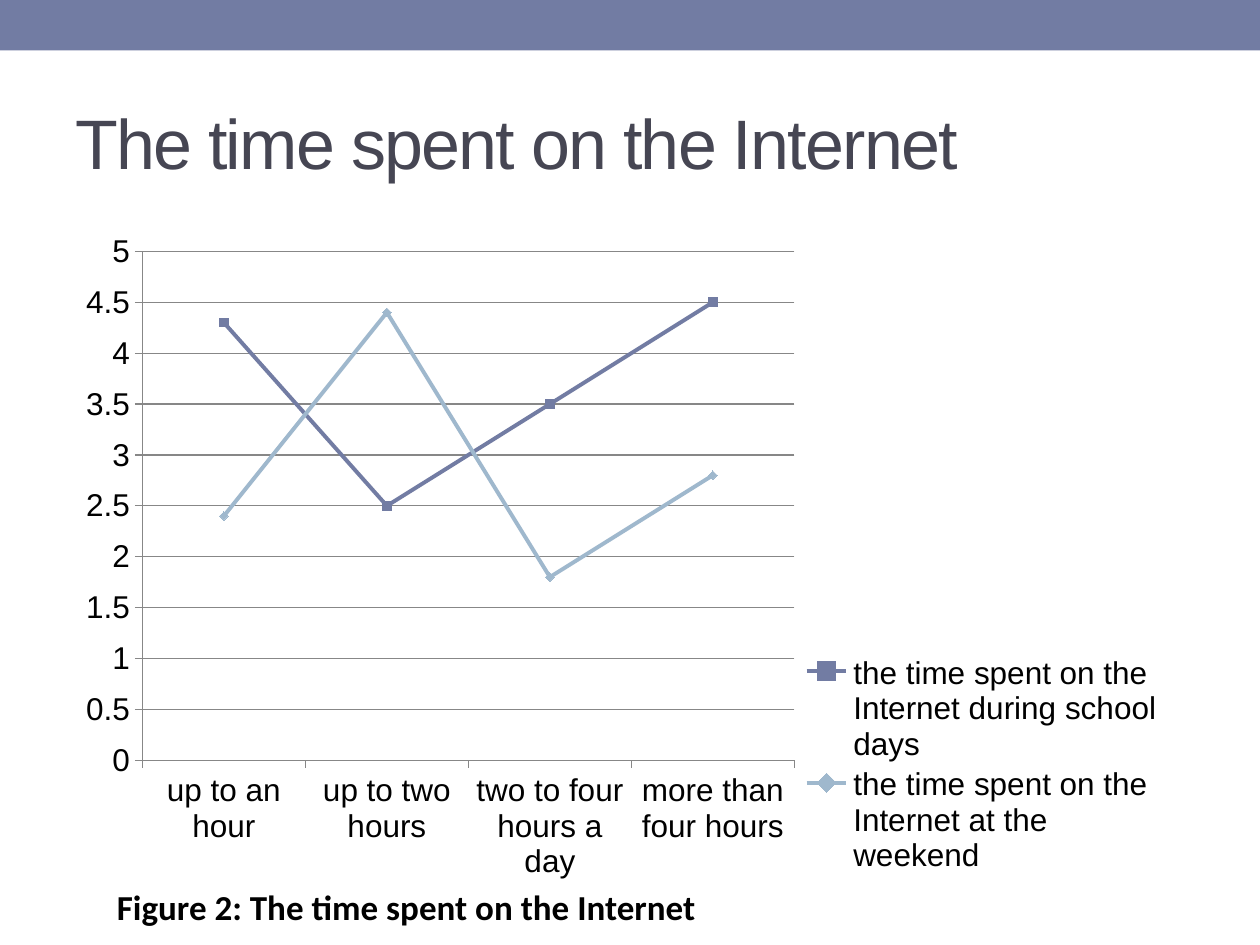
from lxml import etree
from pptx import Presentation
from pptx.chart.data import CategoryChartData
from pptx.dml.color import RGBColor
from pptx.enum.chart import XL_CHART_TYPE, XL_LEGEND_POSITION, XL_MARKER_STYLE, XL_TICK_MARK
from pptx.enum.shapes import MSO_SHAPE
from pptx.enum.text import MSO_ANCHOR
from pptx.oxml.ns import qn
from pptx.util import Pt

LINE_MARKERS = XL_CHART_TYPE.LINE_MARKERS
LEGEND_RIGHT = XL_LEGEND_POSITION.RIGHT
SQUARE, DIAMOND = XL_MARKER_STYLE.SQUARE, XL_MARKER_STYLE.DIAMOND
TICK_OUTSIDE = XL_TICK_MARK.OUTSIDE
RECTANGLE = MSO_SHAPE.RECTANGLE
TOP, MIDDLE = MSO_ANCHOR.TOP, MSO_ANCHOR.MIDDLE

COLORS = {"band": "727CA3", "title": "464653", "text": "000000", "axis": "878787",
          "school": "727CA3", "weekend": "9FB8CD"}

SLIDE_SIZE = (720, 540)
BAND_BOX = (0, 0, 720, 28.8)
CHART_BOX = (36, 126, 648, 383.76)
TEXTS = [
    {"text": "The time spent on the Internet", "box": (36, 41.76, 648, 77.76), "anchor": MIDDLE,
     "color": "title", "spacing": -1, "font": {"name": "Arial", "size": Pt(40), "bold": False}},
    {"text": "Figure 2: The time spent on the Internet", "box": (59.76, 502.56, 357.12, 31.68),
     "anchor": TOP, "color": "text", "spacing": 0,
     "font": {"name": "Calibri", "size": Pt(20), "bold": True}},
]
CATEGORIES = ["up to an hour", "up to two hours", "two to four hours a day",
              "more than four hours"]
SERIES = [
    ("the time spent on the Internet during school days", (4.3, 2.5, 3.5, 4.5), "school", SQUARE),
    ("the time spent on the Internet at the weekend", (2.4, 4.4, 1.8, 2.8), "weekend", DIAMOND),
]
# Left, top, width and height as shares of the chart
PLOT_LAYOUT = (0.07, 0.046, 0.575, 0.758)
LEGEND_LAYOUT = (0.65, 0.64, 0.32, 0.34)


def points(box):
    return [Pt(length) for length in box]


def rgb(name):
    return RGBColor.from_string(COLORS[name])


def fill_solid(fill, color):
    fill.solid()
    fill.fore_color.rgb = rgb(color)


def set_line(line, color, width):
    line.color.rgb = rgb(color)
    line.width = Pt(width)


def set_values(target, values):
    for name, value in values.items():
        setattr(target, name, value)


def set_layout(parent, position, shares, inner=False):
    """Give a chart part a manual layout, as the child at the given position."""
    for old_layout in parent.findall(qn("c:layout")):
        parent.remove(old_layout)
    layout = etree.Element(qn("c:layout"))
    manual = etree.SubElement(layout, qn("c:manualLayout"))
    settings = [("layoutTarget", "inner")] if inner else []
    settings += [("xMode", "edge"), ("yMode", "edge")]
    settings += zip("xywh", shares)
    for tag, value in settings:
        etree.SubElement(manual, qn(f"c:{tag}")).set("val", str(value))
    parent.insert(position, layout)


def add_text(slide, item):
    shape = slide.shapes.add_textbox(*points(item["box"]))
    set_values(shape.text_frame, {"word_wrap": True, "vertical_anchor": item["anchor"]})
    run = shape.text_frame.paragraphs[0].add_run()
    run.text = item["text"]
    set_values(run.font, item["font"])
    run.font.color.rgb = rgb(item["color"])
    if item["spacing"]:
        run._r.get_or_add_rPr().set("spc", str(item["spacing"] * 100))


def add_band(slide):
    band = slide.shapes.add_shape(RECTANGLE, *points(BAND_BOX))
    band.shadow.inherit = False
    fill_solid(band.fill, "band")
    band.line.fill.background()


def add_time_chart(slide):
    data = CategoryChartData()
    data.categories = CATEGORIES
    for name, values, _, _ in SERIES:
        data.add_series(name, values)
    chart = slide.shapes.add_chart(LINE_MARKERS, *points(CHART_BOX), data).chart
    set_values(chart, {"has_title": False, "has_legend": True})
    set_values(chart.font, {"name": "Arial", "size": Pt(18)})
    chart.font.color.rgb = rgb("text")
    set_values(chart.legend, {"position": LEGEND_RIGHT, "include_in_layout": False})

    for axis in (chart.category_axis, chart.value_axis):
        axis.major_tick_mark = TICK_OUTSIDE
        set_line(axis.format.line, "axis", 0.75)
    set_values(chart.value_axis, {"minimum_scale": 0, "maximum_scale": 5, "major_unit": 0.5,
                                  "has_major_gridlines": True})
    set_line(chart.value_axis.major_gridlines.format.line, "axis", 0.75)
    labels = chart.value_axis.tick_labels
    set_values(labels, {"number_format": "General", "number_format_is_linked": False})

    plot = chart.plots[0]
    plot.vary_by_categories = False
    for series, (_, _, color, marker_style) in zip(plot.series, SERIES):
        series.smooth = False
        set_line(series.format.line, color, 2.25)
        set_values(series.marker, {"style": marker_style, "size": 5})
        fill_solid(series.marker.format.fill, color)
        set_line(series.marker.format.line, color, 0.75)

    chart_space = chart._chartSpace
    set_layout(chart_space.find(".//" + qn("c:plotArea")), 0, PLOT_LAYOUT, inner=True)
    set_layout(chart_space.find(".//" + qn("c:legend")), 1, LEGEND_LAYOUT)


def main():
    presentation = Presentation()
    presentation.slide_width, presentation.slide_height = points(SLIDE_SIZE)
    slide = presentation.slides.add_slide(presentation.slide_layouts[6])
    title, caption = TEXTS
    add_band(slide)
    add_text(slide, title)
    add_time_chart(slide)
    add_text(slide, caption)
    presentation.save("out.pptx")


if __name__ == "__main__":
    main()
